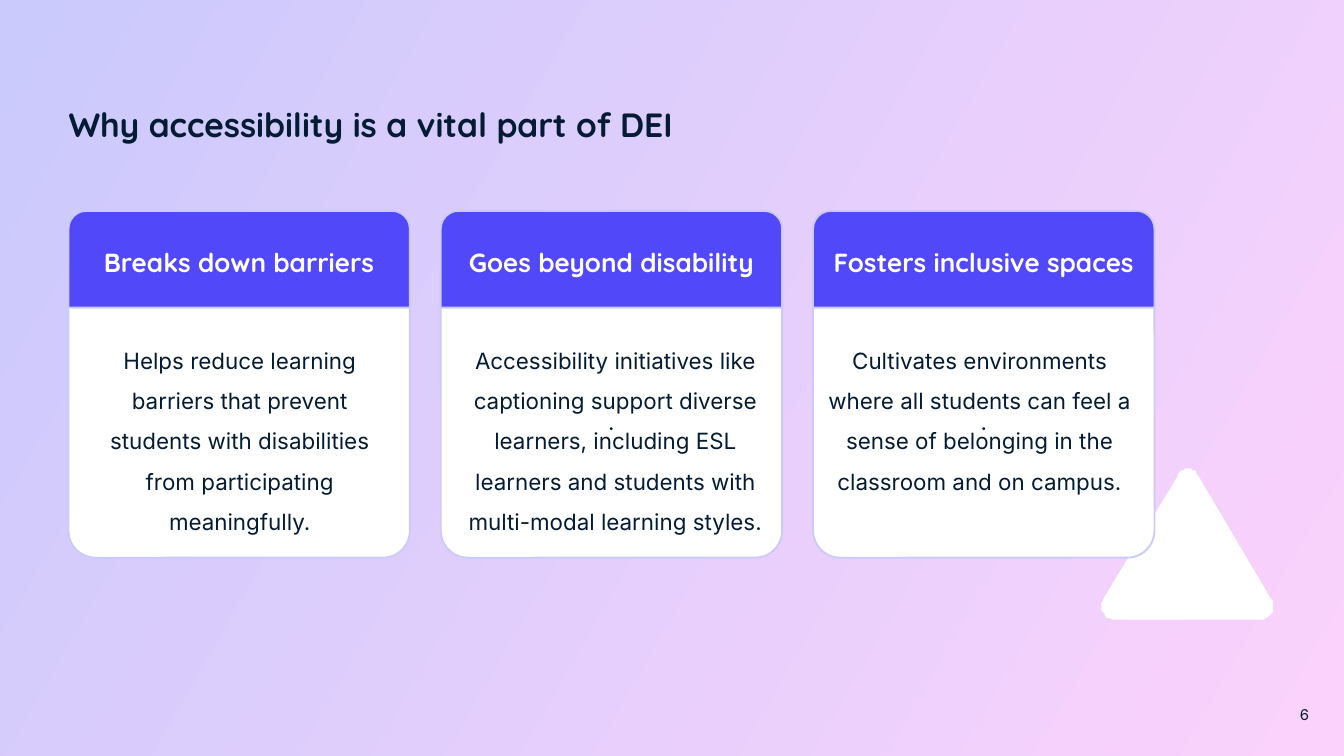
from pptx import Presentation
from pptx import util as u
from pptx.dml.color import RGBColor
from pptx.enum import shapes, text

Pt = u.Pt
NAVY, WHITE, INDIGO, LILAC, PINK = "031C34", "FFFFFF", "5148F9", "CACAFC", "FBD2FC"

TITLE = "Why accessibility is a vital part of DEI"
PAGE = "6"
# heading, body, body left, body width, mark on the card
CARDS = [
    ("Breaks down barriers",
     "Helps reduce learning barriers that prevent students with disabilities "
     "from participating meaningfully.", 50.4, 156.2, ""),
    ("Goes beyond disability",
     "Accessibility initiatives like captioning support diverse learners, including ESL "
     "learners and students with multi-modal learning styles.", 238.3, 182.9, "."),
    ("Fosters inclusive spaces",
     "Cultivates environments where all students can feel a sense of belonging in the "
     "classroom and on campus.", 433.4, 182.9, "."),
]
CARD_LEFT, CARD_PITCH, CARD_WIDTH = 36.7, 199.45, 182.9
# sides of the triangle, each followed by its rounded corner: side start, side end, two controls
TRIANGLE = [
    ((591.1, 321.1), (630.7, 254.9), (633.6, 249.8), (639.4, 249.8)),
    ((642.2, 254.9), (681.1, 321.1), (684, 326.2), (681.1, 331.9)),
    ((676.1, 331.9), (596.9, 331.9), (591.8, 331.9), (588.2, 325.4)),
]


def color(hex_code):
    return RGBColor.from_string(hex_code)


def write(shape, words, size, font="Inter", fill=NAVY, bold=False, align="CENTER",
          anchor="TOP", spacing=None, insets=(7.2, 7.2, 7.2, 7.2)):
    frame = shape.text_frame
    frame.word_wrap = True
    frame.vertical_anchor = getattr(text.MSO_ANCHOR, anchor)
    (frame.margin_left, frame.margin_top,
     frame.margin_right, frame.margin_bottom) = map(Pt, insets)
    line = frame.paragraphs[0]
    line.alignment = getattr(text.PP_ALIGN, align)
    line.line_spacing = spacing
    run = line.add_run()
    run.text = words
    run.font.size, run.font.name, run.font.bold = Pt(size), font, bold
    run.font.color.rgb = color(fill)


def paint(shape, fill, outline=None):
    shape.shadow.inherit = False
    shape.fill.solid()
    shape.fill.fore_color.rgb = color(fill)
    if outline:
        shape.line.color.rgb = color(outline)
        shape.line.width = Pt(1)
    else:
        shape.line.fill.background()


def panel(kind, top, height, fill, *adjustments):
    shape = slide.shapes.add_shape(kind, Pt(left), Pt(top), Pt(CARD_WIDTH), Pt(height))
    for i, value in enumerate(adjustments):
        shape.adjustments[i] = value
    paint(shape, fill, LILAC)
    return shape


def box(*place):
    return slide.shapes.add_textbox(*map(Pt, place))


def curve(points, steps=12):
    """Points along a cubic Bezier curve."""
    for step in range(steps + 1):
        t = step / steps
        weights = ((1 - t) ** 3, 3 * t * (1 - t) ** 2, 3 * t * t * (1 - t), t ** 3)
        yield tuple(sum(w * p[axis] for w, p in zip(weights, points)) for axis in (0, 1))


deck = Presentation()
deck.slide_width, deck.slide_height = Pt(720), Pt(405)
slide = deck.slides.add_slide(deck.slide_layouts[6])

# Background gradient
backdrop = slide.background.fill
backdrop.gradient()
backdrop.gradient_angle = 330
for stop, (position, shade) in zip(backdrop.gradient_stops, [(0, LILAC), (0.99, PINK)]):
    stop.position, stop.color.rgb = position, color(shade)

# Page number
write(box(665.3, 373, 43.2, 31), PAGE, 8, align="RIGHT")

# Rounded triangle behind the last card
outline = []
for i, (start, end, control_1, control_2) in enumerate(TRIANGLE):
    next_start = TRIANGLE[(i + 1) % len(TRIANGLE)][0]
    outline += [start, *curve((end, control_1, control_2, next_start))]
builder = slide.shapes.build_freeform(*outline[0], scale=Pt(1))
builder.add_line_segments(outline[1:], close=True)
paint(builder.convert_to_shape(), WHITE)

# Title
write(box(36.7, 52.6, 586.8, 23.8), TITLE, 18, font="Quicksand", bold=True,
      align="LEFT", spacing=1.14, insets=(0, 0, 7.2, 0))

# Cards
for i, (heading, body, body_left, body_width, mark) in enumerate(CARDS):
    left = CARD_LEFT + i * CARD_PITCH
    card = panel(shapes.MSO_SHAPE.ROUNDED_RECTANGLE, 123.8, 175, WHITE, 0.083)
    if mark:
        write(card, mark, 12, anchor="MIDDLE", spacing=1.5, insets=(7.2, 25.4, 7.2, 3.6))
    header = panel(shapes.MSO_SHAPE.ROUND_2_SAME_RECTANGLE, 113, 51.8, INDIGO, 0.185, 0)
    write(header, heading, 14, font="Quicksand", fill=WHITE, bold=True, anchor="MIDDLE",
          insets=(7.2, 3.6, 7.2, 3.6))
    write(box(body_left, 175, body_width, 113.8), body, 12, spacing=1.5,
          insets=(7.2, 3.6, 7.2, 3.6))

deck.save("out.pptx")
